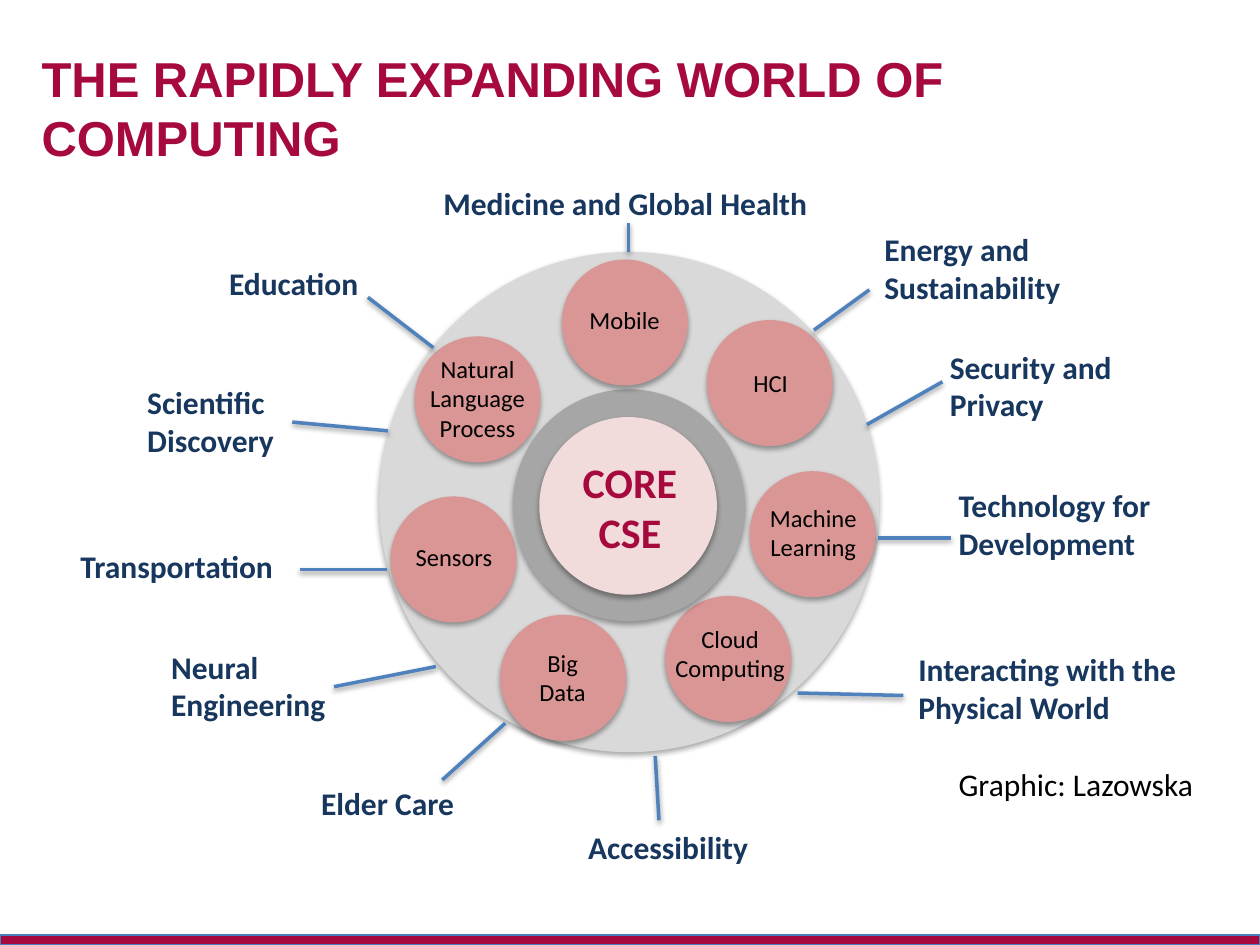
from dataclasses import dataclass

from lxml.etree import SubElement
from pptx import Presentation
from pptx.dml.color import RGBColor as RGB
from pptx.enum.shapes import MSO_CONNECTOR as Link, MSO_SHAPE as Kind
from pptx.enum.text import MSO_ANCHOR as Anchor, MSO_AUTO_SIZE as Fit, PP_ALIGN as Align
from pptx.oxml.ns import qn
from pptx.util import Inches, Pt


@dataclass(frozen=True)
class Theme:
    brand: str = "A6093D"
    edge: str = "4B7EBC"
    disc: str = "D9D9D9"
    ring: str = "A6A6A6"
    core: str = "F2DCDB"
    topic: str = "D99694"
    spoke: str = "4F81BD"
    field: str = "17375E"
    ink: str = "000000"
    head: str = "Arial"
    body: str = "Calibri"
    title: int = 28
    hub: int = 24
    label: int = 18
    small: int = 14


class Deck:
    def __init__(self, theme):
        self.theme = theme
        self.file = Presentation()
        self.file.slide_width, self.file.slide_height = Inches(10), Inches(7.5)
        self.slide = self.file.slides.add_slide(self.file.slide_layouts[5])

    def shade(self, shape, alpha, dist):
        """Give the shape a soft shadow that falls straight down."""
        props = shape._element.spPr
        for old in props.findall(qn("a:effectLst")):
            props.remove(old)
        cast = SubElement(SubElement(props, qn("a:effectLst")), qn("a:outerShdw"),
                          blurRad=str(Pt(3.1)), dist=str(Pt(dist)),
                          dir="5400000", rotWithShape="0")
        tint = SubElement(cast, qn("a:srgbClr"), val=self.theme.ink)
        SubElement(tint, qn("a:alpha"), val=str(alpha * 1000))

    def shape(self, kind, box, fill):
        item = self.slide.shapes.add_shape(kind, *map(Inches, box))
        item.shadow.inherit = False
        item.fill.solid()
        item.fill.fore_color.rgb = RGB.from_string(fill)
        return item

    def bar(self, box):
        item = self.shape(Kind.RECTANGLE, box, self.theme.brand)
        item.line.color.rgb = RGB.from_string(self.theme.edge)
        item.line.width = Pt(0.75)

    def disc(self, left, top, size, fill):
        item = self.shape(Kind.OVAL, (left, top, size, size), fill)
        item.line.fill.background()
        self.shade(item, 35, 1.8)

    def fill(self, frame, lines, size, color, bold, align, face):
        """Put each line in the frame as its own paragraph."""
        for i, line in enumerate(lines):
            para = frame.add_paragraph() if i else frame.paragraphs[0]
            para.alignment = align
            run = para.add_run()
            run.text = line
            font = run.font
            font.name, font.size, font.bold = face, Pt(size), bold
            font.color.rgb = RGB.from_string(color)

    def title(self, text, box):
        item = self.slide.shapes.title
        item.left, item.top, item.width, item.height = map(Inches, box)
        frame = item.text_frame
        frame.word_wrap, frame.auto_size = True, Fit.NONE
        frame.vertical_anchor = Anchor.MIDDLE
        look = self.theme
        self.fill(frame, [text], look.title, look.brand, True, Align.LEFT, look.head)

    def text(self, lines, box, size, color, bold=False, align=Align.LEFT, wrap=True):
        frame = self.slide.shapes.add_textbox(*map(Inches, box)).text_frame
        frame.word_wrap, frame.auto_size = wrap, Fit.SHAPE_TO_FIT_TEXT
        self.fill(frame, lines, size, color, bold, align, self.theme.body)

    def spoke(self, start, end):
        item = self.slide.shapes.add_connector(Link.STRAIGHT, *map(Inches, start + end))
        item.line.color.rgb = RGB.from_string(self.theme.spoke)
        item.line.width = Pt(2)
        self.shade(item, 38, 1.6)


# Circle corner, then label lines, box and alignment
TOPICS = [
    ((5.61, 2.54), ["HCI"], (5.88, 2.87, 0.81, 0.34), Align.LEFT),
    ((5.95, 3.74), ["Machine Learning"], (5.94, 3.94, 1.03, 0.57), Align.CENTER),
    ((5.28, 4.73), ["Cloud", "Computing"], (5.21, 4.9, 1.17, 0.57), Align.CENTER),
    ((3.29, 2.67), ["Natural Language Process"], (3.28, 2.76, 1.02, 0.81), Align.CENTER),
    ((3.1, 3.94), ["Sensors"], (3.2, 4.25, 0.81, 0.34), Align.LEFT),
    ((3.97, 4.88), ["Big Data"], (4.06, 5.09, 0.81, 0.57), Align.CENTER),
    ((4.46, 2.06), ["Mobile"], (4.58, 2.37, 0.81, 0.34), Align.LEFT),
]

# Label lines and box, then the ends of the spoke
FIELDS = [
    (["Medicine and Global Health"], (3.42, 1.41, 3.41, 0.4), (4.99, 2), (4.99, 1.77)),
    (["Energy and", "Sustainability"], (6.92, 1.78, 1.66, 0.71), (6.46, 2.62), (6.9, 2.3)),
    (["Security and", "Privacy"], (7.44, 2.71, 1.66, 0.71), (6.88, 3.37), (7.48, 3.03)),
    (["Technology for", "Development"], (7.51, 3.81, 1.97, 0.71), (6.97, 4.27), (7.55, 4.27)),
    (["Interacting with the Physical World"], (7.19, 5.11, 2.47, 0.71),
     (6.33, 5.5), (7.17, 5.52)),
    (["Accessibility"], (4.57, 6.52, 1.66, 0.4), (5.2, 6), (5.23, 6.51)),
    (["Elder Care"], (2.45, 6.17, 1.66, 0.4), (4.01, 5.74), (3.51, 6.19)),
    (["Neural", "Engineering"], (1.26, 5.09, 1.66, 0.71), (3.46, 5.29), (2.65, 5.45)),
    (["Transportation"], (0.54, 4.29, 1.77, 0.4), (3.07, 4.52), (2.38, 4.52)),
    (["Scientific Discovery"], (1.07, 2.99, 1.32, 0.71), (3.08, 3.42), (2.32, 3.35)),
    (["Education"], (1.72, 2.05, 1.7, 0.4), (3.44, 2.76), (2.92, 2.36)),
]


def main():
    look = Theme()
    deck = Deck(look)
    deck.bar((0, 7.42, 10, 0.08))
    deck.title("THE RAPIDLY EXPANDING WORLD OF COMPUTING", (0.23, 0.3, 9.55, 1.1))

    deck.disc(3.01, 2, 3.97, look.disc)
    *outer, mobile = TOPICS
    for spot, *_ in outer:
        deck.disc(*spot, 1, look.topic)
    deck.disc(4.07, 3.09, 1.84, look.ring)
    deck.disc(4.28, 3.31, 1.41, look.core)
    deck.disc(*mobile[0], 1, look.topic)

    deck.text(["CORE", "CSE"], (4.43, 3.57, 1.14, 0.91), look.hub, look.brand,
              True, Align.CENTER)
    for _, lines, box, align in TOPICS:
        deck.text(lines, box, look.small, look.ink, align=align)
    for lines, box, start, end in FIELDS:
        deck.text(lines, box, look.label, look.field, True)
        deck.spoke(start, end)
    deck.text(["Graphic: Lazowska"], (7.51, 6.02, 2.1, 0.4), look.label, look.ink, wrap=False)
    deck.file.save("out.pptx")


if __name__ == "__main__":
    main()
